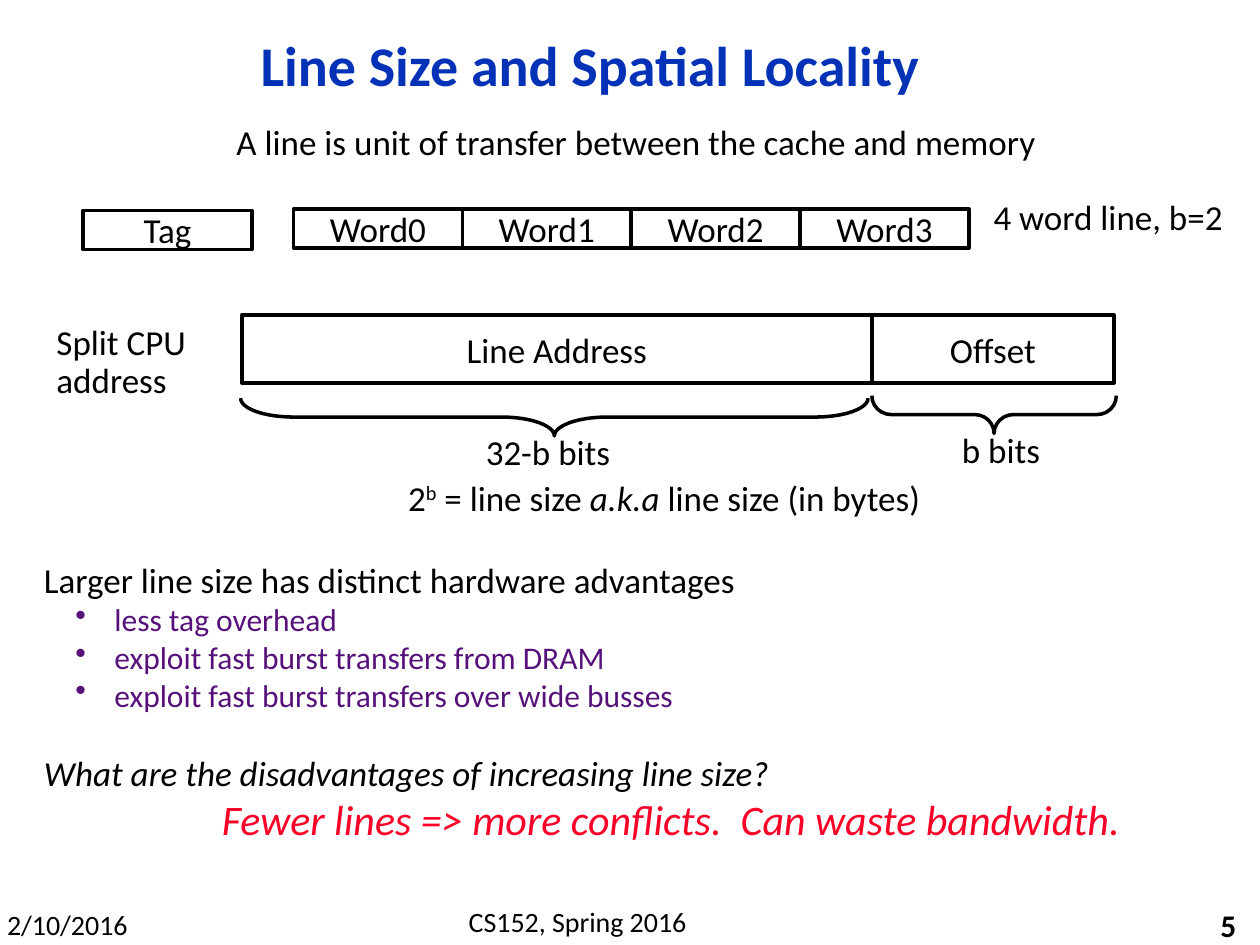
from lxml import etree
from pptx import Presentation
from pptx.dml.color import RGBColor
from pptx.enum.shapes import MSO_SHAPE
from pptx.enum.text import MSO_ANCHOR, PP_ALIGN
from pptx.oxml.ns import qn
from pptx.util import Inches, Pt

RECTANGLE = MSO_SHAPE.RECTANGLE
LEFT_BRACE = MSO_SHAPE.LEFT_BRACE
TOP, MIDDLE = MSO_ANCHOR.TOP, MSO_ANCHOR.MIDDLE
LEFT, CENTER, RIGHT = PP_ALIGN.LEFT, PP_ALIGN.CENTER, PP_ALIGN.RIGHT

COLORS = {
    "text": "000000",
    "title": "0332B7",
    "bullet": "56127A",
    "answer": "FC0128",
    "box": "FFFFFF",
}


def color(name):
    return RGBColor.from_string(COLORS[name])


class SlideBuilder:
    font_name = "Calibri"
    body_size = 20
    line_width = 2

    def __init__(self, slide):
        self.slide = slide

    def format(self, paragraph, size=body_size, ink="text", bold=False,
               italic=None, align=LEFT, spacing=None):
        font = paragraph.font
        font.name, font.size = self.font_name, Pt(size)
        font.bold, font.italic = bold, italic
        font.color.rgb = color(ink)
        paragraph.alignment = align
        paragraph.line_spacing = spacing

    def title(self, text, left, top, width, height):
        shape = self.slide.shapes.title
        shape.left, shape.top = Inches(left), Inches(top)
        shape.width, shape.height = Inches(width), Inches(height)
        shape.text_frame.text = text
        shape.text_frame.vertical_anchor = MIDDLE
        self.format(shape.text_frame.paragraphs[0], 32, "title", bold=True,
                    align=CENTER, spacing=0.9)

    def text(self, text, left, top, width, height, wrap=False, anchor=TOP, **style):
        box = self.slide.shapes.add_textbox(
            Inches(left), Inches(top), Inches(width), Inches(height))
        frame = box.text_frame
        frame.word_wrap, frame.vertical_anchor = wrap, anchor
        paragraph = frame.paragraphs[0]
        paragraph.text = text
        self.format(paragraph, **style)
        return box

    def outline(self, shape):
        shape.shadow.inherit = False
        shape.line.color.rgb = color("text")
        shape.line.width = Pt(self.line_width)

    def field(self, text, left, top, width, height):
        """Add an outlined box that names one part of a line or address."""
        shape = self.slide.shapes.add_shape(
            RECTANGLE, Inches(left), Inches(top), Inches(width), Inches(height))
        self.outline(shape)
        shape.fill.solid()
        shape.fill.fore_color.rgb = color("box")
        frame = shape.text_frame
        frame.word_wrap, frame.vertical_anchor = False, MIDDLE
        frame.text = text
        self.format(frame.paragraphs[0], align=CENTER)

    def brace_below(self, left, top, width, depth, curve):
        """Add a left brace turned to point down, given by its turned extent."""
        shape = self.slide.shapes.add_shape(
            LEFT_BRACE, Inches(left + (width - depth) / 2),
            Inches(top - (width - depth) / 2), Inches(depth), Inches(width))
        shape.rotation = 270
        shape.adjustments[0] = curve
        self.outline(shape)
        shape.fill.background()

    def bullet(self, paragraph):
        properties = paragraph._p.get_or_add_pPr()
        properties.set("marL", str(Inches(0.56)))
        properties.set("indent", str(-Inches(0.31)))
        etree.SubElement(properties, qn("a:buChar")).set("char", "•")

    def discussion(self, heading, bullets, question, left, top, width, height):
        box = self.text(heading, left, top, width, height, wrap=True)
        box.fill.solid()
        box.fill.fore_color.rgb = color("box")
        for item in bullets:
            paragraph = box.text_frame.add_paragraph()
            paragraph.text = item
            self.format(paragraph, 18, "bullet")
            self.bullet(paragraph)
        paragraph = box.text_frame.add_paragraph()
        paragraph.text = question
        self.format(paragraph, italic=True)
        paragraph.space_before = Pt(22)

    def line_size_formula(self, left, top, width, height):
        box = self.text("2", left, top, width, height, spacing=0.9)
        paragraph = box.text_frame.paragraphs[0]
        exponent, _, known_as, _ = [
            self.add_run(paragraph, part)
            for part in ("b", " = line size ", "a.k.a", " line size (in bytes)")]
        exponent._r.get_or_add_rPr().set("baseline", "30000")
        known_as.font.italic = True

    def add_run(self, paragraph, text):
        run = paragraph.add_run()
        run.text = text
        return run


def main():
    presentation = Presentation()
    presentation.slide_width, presentation.slide_height = Inches(10), Inches(7.5)
    slide = presentation.slides.add_slide(presentation.slide_layouts[5])
    builder = SlideBuilder(slide)

    builder.text("2/10/2016", -0.05, 7.15, 1.17, 0.37, size=16, align=CENTER)
    builder.text("CS152, Spring 2016", 2.92, 7.13, 3.33, 0.37, size=16, align=CENTER)
    builder.text("5", 7.83, 7.18, 2.08, 0.32, anchor=MIDDLE, size=18, bold=True,
                 align=RIGHT)
    builder.title("Line Size and Spatial Locality", 0.31, -0.08, 8.75, 1.25)
    builder.text("A line is unit of transfer between the cache and memory",
                 0.36, 0.91, 9.38, 0.43, wrap=True, align=CENTER)

    word_width, word_height = 1.34, 0.31
    builder.field("Tag", 0.66, 1.67, word_width, word_height)
    for index in range(4):
        builder.field(f"Word{index}", 2.33 + index * word_width, 1.66,
                      word_width, word_height)
    builder.text("4 word line, b=2", 7.69, 1.5, 2.21, 0.44, align=CENTER)

    builder.text("Split CPU address", 0.35, 2.53, 1.57, 0.71, wrap=True, spacing=0.9)
    builder.field("Line Address", 1.92, 2.5, 5.0, 0.54)
    builder.field("Offset", 6.92, 2.5, 1.92, 0.54)
    builder.brace_below(1.91, 3.16, 4.98, 0.3, 1.4)
    builder.brace_below(6.92, 3.14, 1.94, 0.3, 0.51)
    builder.text("32-b bits", 3.75, 3.37, 1.2, 0.44, align=CENTER)
    builder.text("b bits", 7.53, 3.35, 0.83, 0.44, align=CENTER)
    builder.line_size_formula(3.14, 3.77, 4.32, 0.41)

    builder.discussion(
        "Larger line size has distinct hardware advantages",
        ["less tag overhead",
         "exploit fast burst transfers from DRAM",
         "exploit fast burst transfers over wide busses"],
        "What are the disadvantages of increasing line size?",
        0.25, 4.38, 9.32, 1.97)
    builder.text("Fewer lines => more conflicts.  Can waste bandwidth.",
                 1.46, 6.25, 7.73, 0.5, anchor=MIDDLE, size=24, ink="answer",
                 italic=True, align=CENTER)

    presentation.save("out.pptx")


if __name__ == "__main__":
    main()
